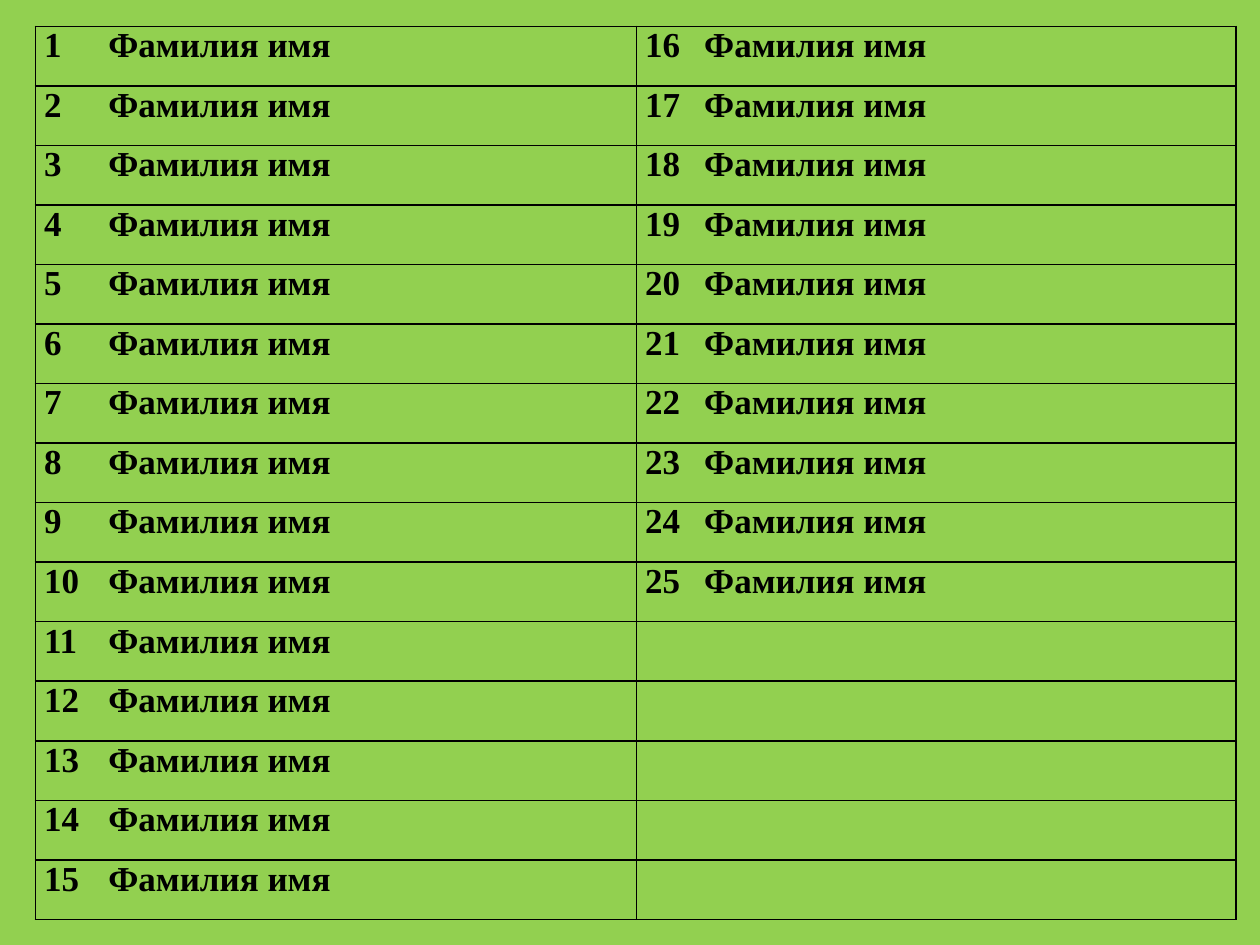
from dataclasses import dataclass

from lxml import etree
from pptx import Presentation
from pptx.dml.color import RGBColor
from pptx.enum.text import PP_ALIGN
from pptx.oxml.ns import qn
from pptx.util import Inches, Pt

LEFT, JUSTIFY = PP_ALIGN.LEFT, PP_ALIGN.JUSTIFY


@dataclass(frozen=True)
class Theme:
    background: str = "92D050"
    ink: str = "000000"
    font: str = "Times New Roman"
    text_size: int = 20
    border_width: int = 1


THEME = Theme()
STUDENT_COUNT = 25
ROW_COUNT = 15
STUDENT_NAME = "Фамилия имя"
COLUMN_WIDTHS = (0.51, 4.26, 0.47, 4.29)
NUMBER_SIDES, NAME_SIDES = "LTB", "RTB"


def set_borders(cell, visible_sides):
    """Draw the given sides (letters of LRTB) and hide the others."""
    properties = cell._tc.get_or_add_tcPr()
    for side in "LRTB":
        line = etree.SubElement(properties, qn(f"a:ln{side}"),
                                w=str(Pt(THEME.border_width)))
        if side in visible_sides:
            fill = etree.SubElement(line, qn("a:solidFill"))
            etree.SubElement(fill, qn("a:srgbClr"), val=THEME.ink)
        else:
            etree.SubElement(line, qn("a:noFill"))


def format_cell(cell, sides):
    margins = {"margin_left": 0.07, "margin_top": 0,
               "margin_right": 0.07, "margin_bottom": 0}
    for name, value in margins.items():
        setattr(cell, name, Inches(value))
    set_borders(cell, sides)
    cell.fill.background()


def write_cell(cell, text, alignment):
    para = cell.text_frame.paragraphs[0]
    para.alignment = alignment
    span = para.add_run()
    span.text = text
    font_values = {"name": THEME.font, "size": Pt(THEME.text_size), "bold": True}
    for name, value in font_values.items():
        setattr(span.font, name, value)
    span.font.color.rgb = RGBColor.from_string(THEME.ink)


def add_student_list(page, left, top, width, height):
    """Number the students down the first pair of columns, then the second."""
    frame = page.shapes.add_table(ROW_COUNT, len(COLUMN_WIDTHS),
                                  left, top, width, height)
    table = frame.table
    table.first_row = table.horz_banding = False
    for column, share in zip(table.columns, COLUMN_WIDTHS):
        column.width = int(width * share / sum(COLUMN_WIDTHS))
    for row in table.rows:
        row.height = int(height / ROW_COUNT)

    for position in range(ROW_COUNT * len(COLUMN_WIDTHS) // 2):
        pair, row = divmod(position, ROW_COUNT)
        number = position + 1
        parts = ((str(number), LEFT, NUMBER_SIDES),
                 (STUDENT_NAME, JUSTIFY, NAME_SIDES))
        for offset, (text, alignment, sides) in enumerate(parts):
            cell = table.cell(row, pair * 2 + offset)
            format_cell(cell, sides)
            if number <= STUDENT_COUNT:
                write_cell(cell, text, alignment)


def main():
    deck = Presentation()
    deck.slide_width, deck.slide_height = Inches(10), Inches(7.5)
    page = deck.slides.add_slide(deck.slide_layouts[6])
    page.background.fill.solid()
    page.background.fill.fore_color.rgb = RGBColor.from_string(THEME.background)
    add_student_list(page, Inches(0.28), Inches(0.21), Inches(9.53), Inches(7.09))
    deck.save("out.pptx")


if __name__ == "__main__":
    main()
